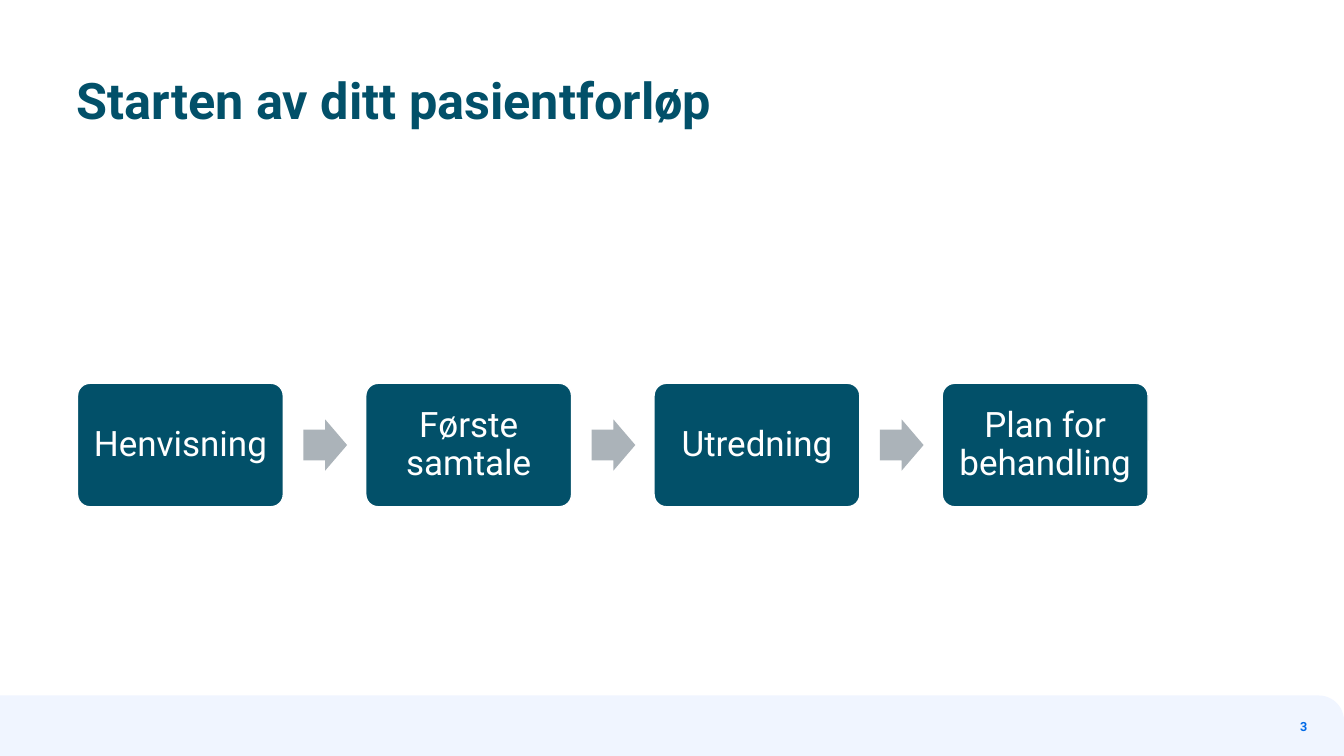
from dataclasses import dataclass

from pptx import Presentation
from pptx import util as u
from pptx.dml.color import RGBColor
from pptx.enum import shapes, text


@dataclass(frozen=True)
class Theme:
    font: str = "Roboto"
    petrol: str = "025069"
    grey: str = "ABB3B9"
    pale: str = "F0F5FF"
    blue: str = "0069E7"
    white: str = "FFFFFF"
    title_size: int = 36
    step_size: int = 25
    number_size: int = 9


class SlideBuilder:
    def __init__(self, slide, theme):
        self.slide = slide
        self.theme = theme

    def shape(self, kind, box, fill, adjustments, line=None):
        item = self.slide.shapes.add_shape(kind, *map(u.Pt, box))
        item.shadow.inherit = False
        for index, value in enumerate(adjustments):
            item.adjustments[index] = value
        item.fill.solid()
        item.fill.fore_color.rgb = RGBColor.from_string(fill)
        if line:
            item.line.color.rgb = RGBColor.from_string(line)
            item.line.width = u.Pt(1)
        else:
            item.line.fill.background()
        return item

    def set_text(self, item, words, size, color, bold=False, inset=0,
                 align=text.PP_ALIGN.LEFT, anchor=text.MSO_ANCHOR.MIDDLE, spacing=1.0):
        frame = item.text_frame
        margins = {f"margin_{side}": u.Pt(inset) for side in ("left", "top", "right", "bottom")}
        paragraph = frame.paragraphs[0]
        run = paragraph.add_run()
        run.text = words
        formats = (
            (frame, {"word_wrap": True, "vertical_anchor": anchor, **margins}),
            (paragraph, {"alignment": align, "line_spacing": spacing}),
            (run.font, {"name": self.theme.font, "size": u.Pt(size), "bold": bold}),
        )
        for target, values in formats:
            for name, value in values.items():
                setattr(target, name, value)
        run.font.color.rgb = RGBColor.from_string(color)

    def label(self, box, words, size, color, **style):
        item = self.slide.shapes.add_textbox(*map(u.Pt, box))
        self.set_text(item, words, size, color, **style)

    def step(self, box, words):
        item = self.shape(shapes.MSO_SHAPE.ROUNDED_RECTANGLE, box,
                          self.theme.petrol, [0.1], line=self.theme.white)
        self.set_text(item, words, self.theme.step_size, self.theme.white, inset=7.2,
                      align=text.PP_ALIGN.CENTER, spacing=0.9)

    def arrow(self, box):
        self.shape(shapes.MSO_SHAPE.RIGHT_ARROW, box, self.theme.grey, [0.6, 0.5])


def main():
    deck = Presentation()
    deck.slide_width, deck.slide_height = u.Pt(960), u.Pt(540)
    theme = Theme()
    page = SlideBuilder(deck.slides.add_slide(deck.slide_layouts[6]), theme)

    # Footer band
    page.shape(shapes.MSO_SHAPE.ROUND_1_RECTANGLE, (0, 496.8, 960, 43.2), theme.pale, [0.417])

    # Title
    page.label((54.8, 49, 765.4, 82), "Starten av ditt pasientforløp", theme.title_size,
               theme.petrol, bold=True, anchor=text.MSO_ANCHOR.TOP)

    # Patient pathway: steps joined by arrows
    steps = ["Henvisning", "Første samtale", "Utredning", "Plan for behandling"]
    left, top, width, height = 55.4, 273.8, 147, 88.2
    pitch = 205.9
    arrow_offset, arrow_width, arrow_height = 161.3, 31.2, 36.5
    for index, words in enumerate(steps):
        x = left + index * pitch
        page.step((x, top, width, height), words)
        if index < len(steps) - 1:
            page.arrow((x + arrow_offset, top + (height - arrow_height) / 2,
                        arrow_width, arrow_height))

    # Page number
    page.label((820, 509, 113.8, 19.4), "3", theme.number_size, theme.blue,
               bold=True, align=text.PP_ALIGN.RIGHT)

    deck.save("out.pptx")


if __name__ == "__main__":
    main()
